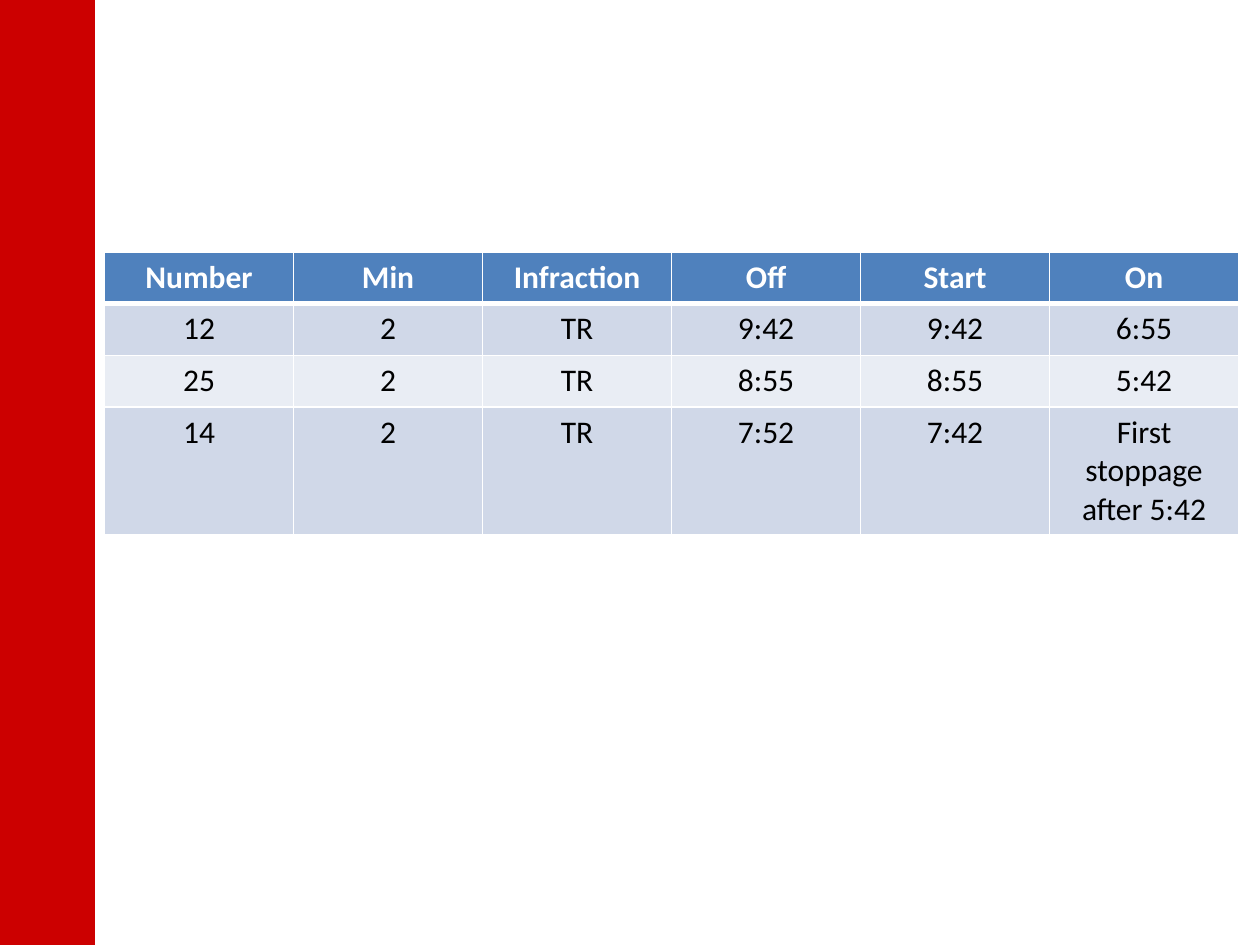
"""Build a slide with a penalty time table beside a red side bar."""
from lxml.etree import SubElement
from pptx import Presentation
from pptx.dml.color import RGBColor
from pptx.enum.shapes import MSO_SHAPE
from pptx.enum.text import PP_ALIGN
from pptx.oxml.ns import qn
from pptx.util import Inches, Pt

ROWS = [
    ("Number", "Min", "Infraction", "Off", "Start", "On"),
    ("12", "2", "TR", "9:42", "9:42", "6:55"),
    ("25", "2", "TR", "8:55", "8:55", "5:42"),
    ("14", "2", "TR", "7:52", "7:42", "First stoppage after 5:42"),
]
COLORS = {"bar": "CC0000", "head": "4F81BD", "odd": "D0D8E8",
          "even": "E9EDF4", "white": "FFFFFF", "black": "000000"}
FONT = {"name": "Calibri", "size": Pt(18)}
COL_W, ROW_H, LAST_H = 1.5, 0.41, 1


def color(name):
    return RGBColor.from_string(COLORS[name])


def add_bar(slide, height):
    bar = slide.shapes.add_shape(MSO_SHAPE.RECTANGLE, 0, 0, Inches(0.75), height)
    bar.shadow.inherit = False
    bar.fill.solid()
    bar.fill.fore_color.rgb = bar.line.color.rgb = color("bar")
    bar.line.width = Pt(0.75)


def add_edges(cell, widths):
    props = cell._tc.get_or_add_tcPr()
    for side, width in widths.items():
        edge = SubElement(props, qn(f"a:ln{side}"), w=str(Pt(width)))
        fill = SubElement(edge, qn("a:solidFill"))
        SubElement(fill, qn("a:srgbClr"), val=COLORS["white"])


def style_cell(cell, row):
    head = row == 0
    add_edges(cell, {"L": 1, "R": 1, "T": 3 if row == 1 else 1, "B": 3 if head else 1})
    cell.fill.solid()
    cell.fill.fore_color.rgb = color("head" if head else "odd" if row % 2 else "even")
    line = cell.text_frame.paragraphs[0]
    line.alignment = PP_ALIGN.CENTER
    font = line.runs[0].font
    for key, value in {**FONT, "bold": head}.items():
        setattr(font, key, value)
    font.color.rgb = color("white" if head else "black")


def add_grid(slide):
    count, cols = len(ROWS), len(ROWS[0])
    heights = [ROW_H] * (count - 1) + [LAST_H]
    table = slide.shapes.add_table(
        count, cols, Inches(0.83), Inches(2),
        Inches(COL_W * cols), Inches(sum(heights))).table
    for col in table.columns:
        col.width = Inches(COL_W)
    for row, texts in enumerate(ROWS):
        table.rows[row].height = Inches(heights[row])
        for col, text in enumerate(texts):
            cell = table.cell(row, col)
            cell.text = text
            style_cell(cell, row)


def main():
    deck = Presentation()
    deck.slide_width, deck.slide_height = Inches(10), Inches(7.5)
    slide = deck.slides.add_slide(deck.slide_layouts[6])
    add_bar(slide, deck.slide_height)
    add_grid(slide)
    deck.save("out.pptx")


if __name__ == "__main__":
    main()
